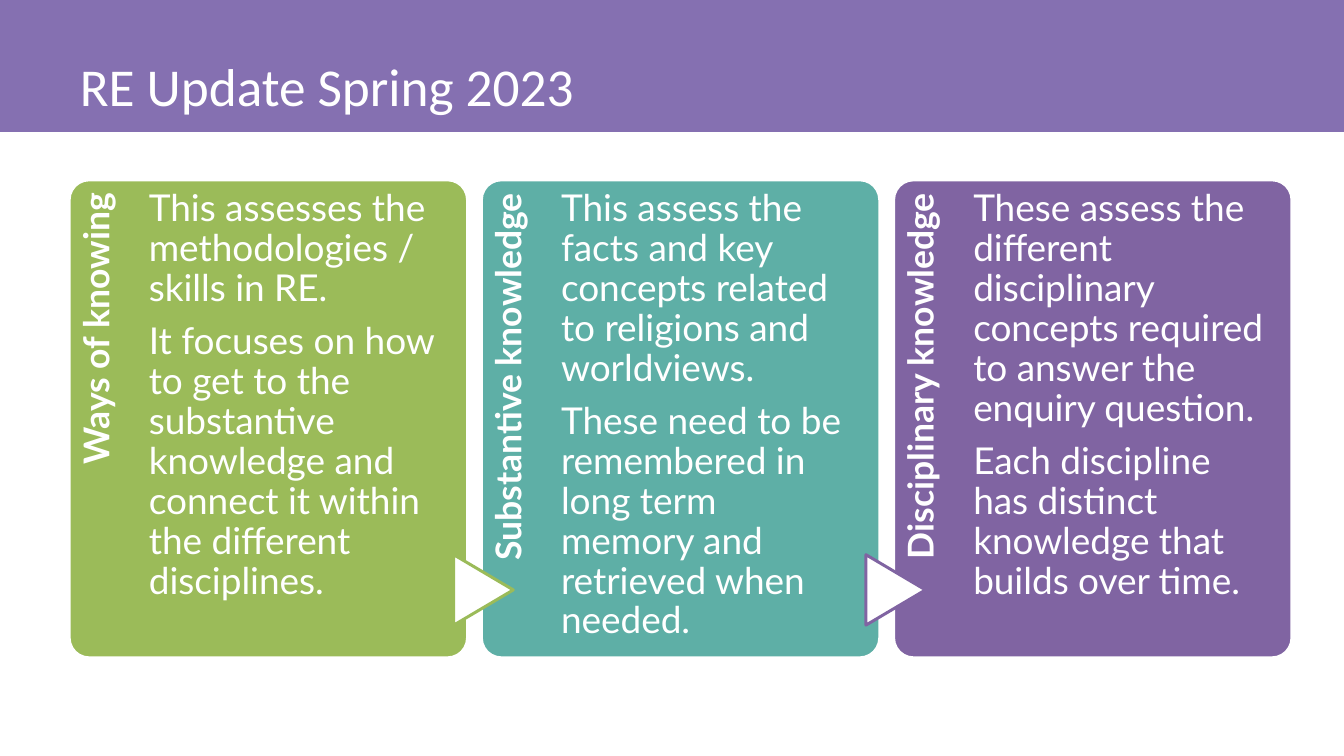
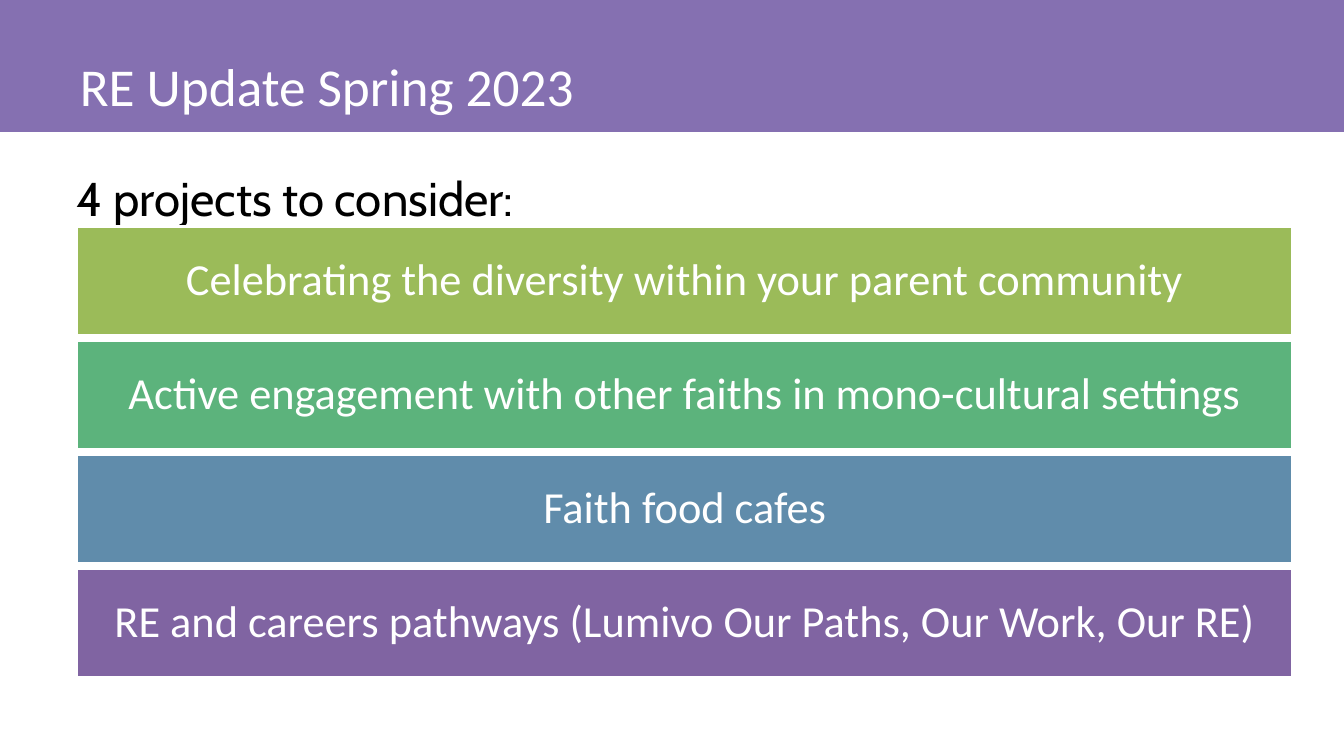
"""Build the two RE update slides."""
from pptx import Presentation
from pptx.dml.color import RGBColor
from pptx.enum import shapes, text
from pptx.util import Cm, Pt

WHITE = RGBColor(0xFF, 0xFF, 0xFF)
BLACK = RGBColor(0x00, 0x00, 0x00)
BAND = RGBColor(0x85, 0x70, 0xB1)
LIME = RGBColor(0x9B, 0xBB, 0x59)
TEAL = RGBColor(0x5E, 0xAF, 0xA6)
GREEN = RGBColor(0x5C, 0xB3, 0x7C)
BLUE = RGBColor(0x60, 0x8C, 0xAB)
PURPLE = RGBColor(0x80, 0x64, 0xA2)

SLIDE_WIDTH, SLIDE_HEIGHT = 32.05, 18.03
TITLE = "RE Update Spring 2023"
CARDS = [
    ("Ways of knowing", LIME, None, [
        "This assesses the methodologies / skills in RE.",
        "It focuses on how to get to the substantive knowledge and connect it "
        "within the different disciplines.",
    ]),
    ("Substantive knowledge", TEAL, LIME, [
        "This assess the facts and key concepts related to religions and worldviews.",
        "These need to be remembered in long term memory and retrieved when needed.",
    ]),
    ("Disciplinary knowledge", PURPLE, PURPLE, [
        "These assess the different disciplinary concepts required to answer "
        "the enquiry question.",
        "Each discipline has distinct knowledge that builds over time.",
    ]),
]
INTRO = "4 projects to consider:"
PROJECTS = [
    ("Celebrating the diversity within your parent community", LIME),
    ("Active engagement with other faiths in mono-cultural settings", GREEN),
    ("Faith food cafes", BLUE),
    ("RE and careers pathways (Lumivo Our Paths, Our Work, Our RE)", PURPLE),
]
CARD_LEFT, CARD_TOP, CARD_WIDTH, CARD_HEIGHT, CARD_STEP = 1.65, 4.29, 9.5, 11.4, 9.83
BAR_LEFT, BAR_TOP, BAR_WIDTH, BAR_HEIGHT, BAR_STEP = 1.83, 5.41, 29, 2.59, 2.72


def add_block(slide, kind, place, fill, line=WHITE):
    block = slide.shapes.add_shape(kind, *map(Cm, place))
    block.shadow.inherit = False
    block.fill.solid()
    block.fill.fore_color.rgb = fill
    block.line.color.rgb = line
    block.line.width = Pt(2)
    return block


def write(box, lines, font, size, color=WHITE, bold=False, align=text.PP_ALIGN.LEFT,
          anchor=text.MSO_ANCHOR.TOP, margins=None, spacing=0.9, gap=0):
    frame = box.text_frame
    frame.word_wrap = True
    frame.vertical_anchor = anchor
    if margins:
        (frame.margin_left, frame.margin_top,
         frame.margin_right, frame.margin_bottom) = map(Cm, margins)
    frame.text = "\n".join(lines)
    for para in frame.paragraphs:
        para.alignment = align
        para.line_spacing = spacing
        para.space_before = Pt(0)
        para.space_after = Pt(gap)
        para.font.name = font
        para.font.size = Pt(size)
        para.font.bold = bold
        para.font.color.rgb = color


def add_text(slide, place, lines, font, size, **style):
    box = slide.shapes.add_textbox(*map(Cm, place))
    write(box, lines, font, size, **style)
    return box


def add_titled_slide(deck, layout):
    slide = deck.slides.add_slide(layout)
    title = slide.shapes.title
    title.left, title.top, title.width, title.height = map(Cm, (1.65, 0.71, 23.6, 2.21))
    write(title, [TITLE], "Calibri", 36, anchor=text.MSO_ANCHOR.BOTTOM, spacing=1.0)
    return slide


def add_card(slide, index, label, fill, arrow_line, lines):
    left = CARD_LEFT + index * CARD_STEP
    card = add_block(slide, shapes.MSO_SHAPE.ROUNDED_RECTANGLE,
                     (left, CARD_TOP, CARD_WIDTH, CARD_HEIGHT), fill)
    card.adjustments[0] = 0.05
    heading = add_text(slide, (left - 3.73, 8.03, 9.35, 1.9), [label], "Lato", 24, bold=True,
                       align=text.PP_ALIGN.RIGHT, margins=(0, 0.23, 0.3, 0))
    heading.rotation = 270
    if arrow_line:
        arrow = add_block(slide, shapes.MSO_SHAPE.FLOWCHART_EXTRACT,
                          (left - 0.79, 13.36, 1.68, 1.42), WHITE, arrow_line)
        arrow.rotation = 90
    add_text(slide, (left + 1.9, CARD_TOP, 7.09, CARD_HEIGHT), lines, "Lato", 25,
             margins=(0, 0.23, 0, 0), gap=9)


def main():
    deck = Presentation()
    deck.slide_width, deck.slide_height = Cm(SLIDE_WIDTH), Cm(SLIDE_HEIGHT)
    layout = deck.slide_layouts.get_by_name("Title Only")

    knowledge = add_titled_slide(deck, layout)
    band = add_block(knowledge, shapes.MSO_SHAPE.RECTANGLE, (0, 0, SLIDE_WIDTH, 3.15), BAND)
    band.line.fill.background()
    layout.shapes.element.insert(2, band.element)
    for index, card in enumerate(CARDS):
        add_card(knowledge, index, *card)

    projects = add_titled_slide(deck, layout)
    add_text(projects, (1.57, 3.91, 29.18, 1.6), [INTRO], "Cabin", 32, color=BLACK, spacing=1.0)
    for index, (project, fill) in enumerate(PROJECTS):
        place = (BAR_LEFT, BAR_TOP + index * BAR_STEP, BAR_WIDTH, BAR_HEIGHT)
        bar = add_block(projects, shapes.MSO_SHAPE.RECTANGLE, place, fill)
        write(bar, [project], "Calibri", 30, align=text.PP_ALIGN.CENTER,
              anchor=text.MSO_ANCHOR.MIDDLE, margins=(0.2, 0.2, 0.2, 0.2))
    deck.save("out.pptx")


if __name__ == "__main__":
    main()
